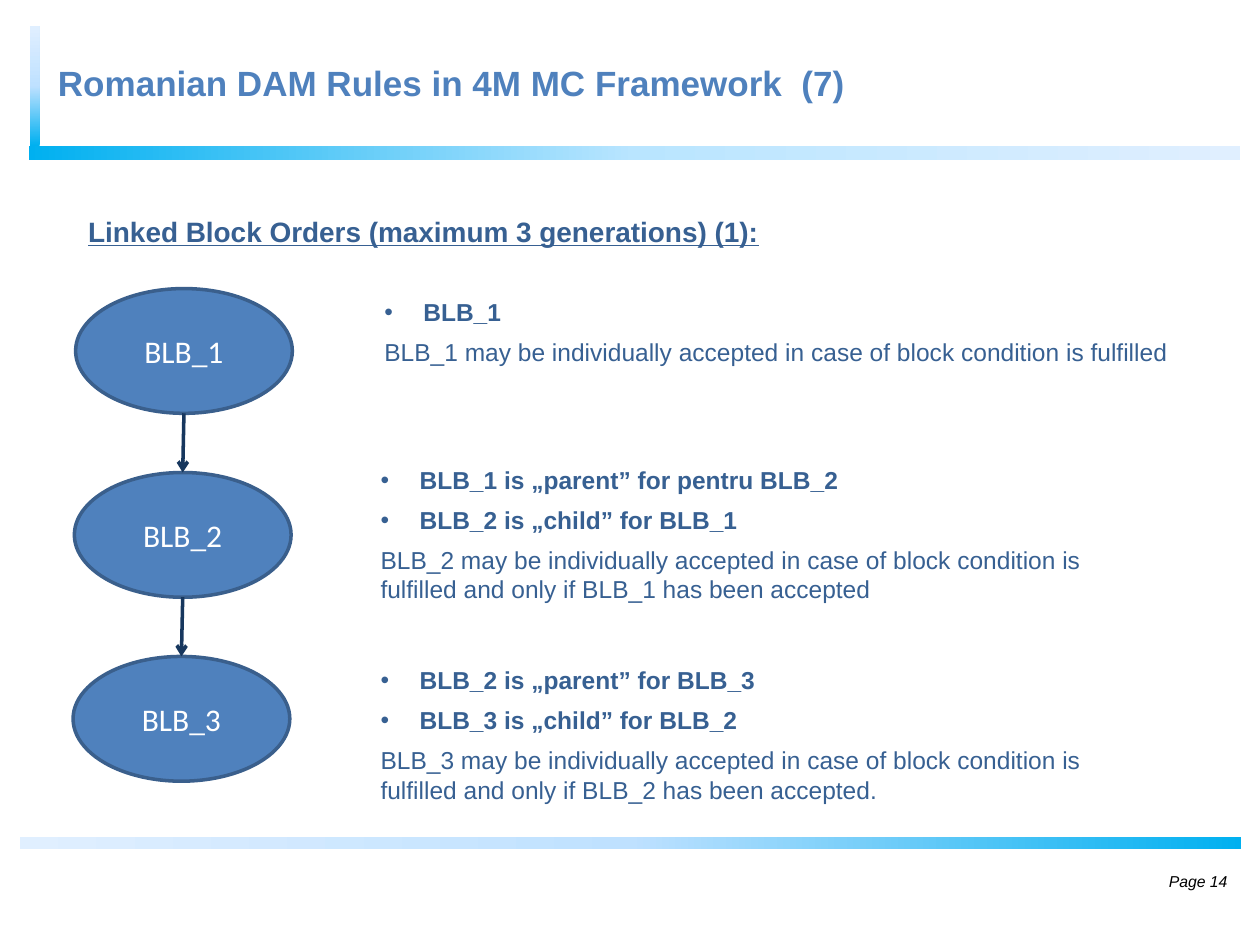
from lxml import etree
from pptx import Presentation
from pptx.dml.color import RGBColor
from pptx.enum.shapes import MSO_CONNECTOR, MSO_SHAPE
from pptx.enum.text import MSO_ANCHOR, MSO_AUTO_SIZE, PP_ALIGN
from pptx.oxml import parse_xml
from pptx.oxml.ns import nsdecls, qn
from pptx.util import Inches, Pt

COLORS = {
    "title": "4F81BD", "text": "376092", "oval": "4F81BD", "outline": "3A5F8C",
    "arrow": "17375E", "white": "FFFFFF", "black": "000000",
    "cyan": "00B0F0", "sky": "BFE1FF", "light_sky": "B9E5FF", "pale": "E0EFFF",
}
TITLE = "Romanian DAM Rules in 4M MC Framework  (7)"
HEADING = "Linked Block Orders (maximum 3 generations) (1):"
PAGE = "Page 14"
BLOCKS = ["BLB_1", "BLB_2", "BLB_3"]
RULES = [
    ((2.95, 2.31, 6.54, 0.66), ["BLB_1"],
     "BLB_1 may be individually accepted in case of block condition is fulfilled"),
    ((2.92, 3.64, 6.02, 1.21),
     ["BLB_1 is „parent” for pentru BLB_2", "BLB_2 is „child” for BLB_1"],
     "BLB_2 may be individually accepted in case of block condition is "
     "fulfilled and only if BLB_1 has been accepted"),
    ((2.92, 5.23, 6.02, 1.21),
     ["BLB_2 is „parent” for BLB_3", "BLB_3 is „child” for BLB_2"],
     "BLB_3 may be individually accepted in case of block condition is "
     "fulfilled and only if BLB_2 has been accepted."),
]
BARS = [
    ((0.23, 1.16, 9.61, 0.11), 0, ["cyan", "light_sky", "pale"]),
    ((-0.2, 0.64, 0.95, 0.08), 270, ["cyan", "sky", "pale"]),
    ((0.16, 6.64, 9.69, 0.1), 0, ["pale", "sky", "cyan"]),
]
OVAL_LEFT, OVAL_TOP, OVAL_WIDTH, OVAL_HEIGHT = 0.6, 2.29, 1.72, 0.99
STEP_X, STEP_Y = -0.01, 1.46


def color(name):
    return RGBColor.from_string(COLORS[name])


def place(shape, box):
    shape.left, shape.top, shape.width, shape.height = map(Inches, box)


def add_run(paragraph, text, size, color_name, face="Arial", bold=False):
    run = paragraph.add_run()
    run.text = text
    font = run.font
    font.name, font.size, font.bold = face, Pt(size), bold
    font.color.rgb = color(color_name)
    return run


def prepare(shape, box):
    place(shape, box)
    frame = shape.text_frame
    frame.word_wrap = True
    frame.auto_size = MSO_AUTO_SIZE.NONE
    frame.vertical_anchor = MSO_ANCHOR.TOP
    return frame


def set_bullet(paragraph, bulleted):
    properties = paragraph._p.get_or_add_pPr()
    indent = Inches(0.31) if bulleted else 0
    properties.set("marL", str(indent))
    properties.set("indent", str(-indent))
    if bulleted:
        etree.SubElement(properties, qn("a:buFont")).set("typeface", "Arial")
        etree.SubElement(properties, qn("a:buChar")).set("char", "•")
    else:
        etree.SubElement(properties, qn("a:buNone"))


def add_bar(shapes, box, rotation, stops):
    bar = shapes.add_shape(MSO_SHAPE.RECTANGLE, *map(Inches, box))
    bar.rotation = rotation
    bar.shadow.inherit = False
    bar.line.fill.background()
    bar.fill.gradient()
    bar.fill.gradient_angle = 0
    stop_xml = "".join(
        f'<a:gs pos="{i * 50000}"><a:srgbClr val="{COLORS[name]}"/></a:gs>'
        for i, name in enumerate(stops))
    stop_list = bar._element.spPr.find(qn("a:gradFill")).find(qn("a:gsLst"))
    stop_list.getparent().replace(
        stop_list, parse_xml(f'<a:gsLst {nsdecls("a")}>{stop_xml}</a:gsLst>'))


def add_block(shapes, label, left, top):
    oval = shapes.add_shape(MSO_SHAPE.OVAL, Inches(left), Inches(top),
                            Inches(OVAL_WIDTH), Inches(OVAL_HEIGHT))
    oval.shadow.inherit = False
    oval.fill.solid()
    oval.fill.fore_color.rgb = color("oval")
    oval.line.color.rgb = color("outline")
    oval.line.width = Pt(2)
    oval.text_frame.vertical_anchor = MSO_ANCHOR.MIDDLE
    paragraph = oval.text_frame.paragraphs[0]
    paragraph.alignment = PP_ALIGN.CENTER
    add_run(paragraph, label, 18, "white", "Calibri")
    return oval


def add_arrow(shapes, parent, child):
    arrow = shapes.add_connector(
        MSO_CONNECTOR.STRAIGHT,
        parent.left + parent.width // 2, parent.top + parent.height,
        child.left + child.width // 2, child.top)
    arrow.line.color.rgb = color("arrow")
    arrow.line.width = Pt(2)
    etree.SubElement(arrow.line._get_or_add_ln(), qn("a:tailEnd")).set("type", "arrow")
    etree.SubElement(arrow._element.spPr, qn("a:effectLst"))


def add_rule(placeholder, box, bullets, explanation):
    frame = prepare(placeholder, box)
    lines = [(text, True) for text in bullets] + [(explanation, False)]
    for i, (text, bulleted) in enumerate(lines):
        paragraph = frame.add_paragraph() if i else frame.paragraphs[0]
        paragraph.space_before = Pt(6 if i else 0)
        set_bullet(paragraph, bulleted)
        add_run(paragraph, text, 14, "text", bold=bulleted)


def main():
    presentation = Presentation()
    presentation.slide_width, presentation.slide_height = Inches(10), Inches(7.5)
    comparison_layout = presentation.slide_layouts[4]
    slide = presentation.slides.add_slide(comparison_layout)
    shapes = slide.shapes
    title, heading, *rule_bodies = slide.placeholders

    for bar in BARS:
        add_bar(shapes, *bar)

    title_paragraph = prepare(title, (0.36, 0.44, 9.67, 0.54)).paragraphs[0]
    title_paragraph.alignment = PP_ALIGN.LEFT
    title.fill.solid()
    title.fill.fore_color.rgb = color("white")
    add_run(title_paragraph, TITLE, 20, "title", bold=True)

    heading_paragraph = prepare(heading, (0.6, 1.65, 9.29, 0.37)).paragraphs[0]
    heading_paragraph.space_before = Pt(0)
    set_bullet(heading_paragraph, False)
    add_run(heading_paragraph, HEADING, 16, "text", bold=True).font.underline = True

    for body, rule in zip(rule_bodies, RULES):
        add_rule(body, *rule)

    ovals = [add_block(shapes, label, OVAL_LEFT + i * STEP_X, OVAL_TOP + i * STEP_Y)
             for i, label in enumerate(BLOCKS)]
    for parent, child in zip(ovals, ovals[1:]):
        add_arrow(shapes, parent, child)

    page = shapes.add_textbox(0, 0, 0, 0)
    page_frame = prepare(page, (8.75, 6.79, 1.09, 0.4))
    page_frame.vertical_anchor = MSO_ANCHOR.MIDDLE
    page_paragraph = page_frame.paragraphs[0]
    page_paragraph.alignment = PP_ALIGN.RIGHT
    add_run(page_paragraph, PAGE, 9, "black").font.italic = True

    presentation.save("out.pptx")


if __name__ == "__main__":
    main()
